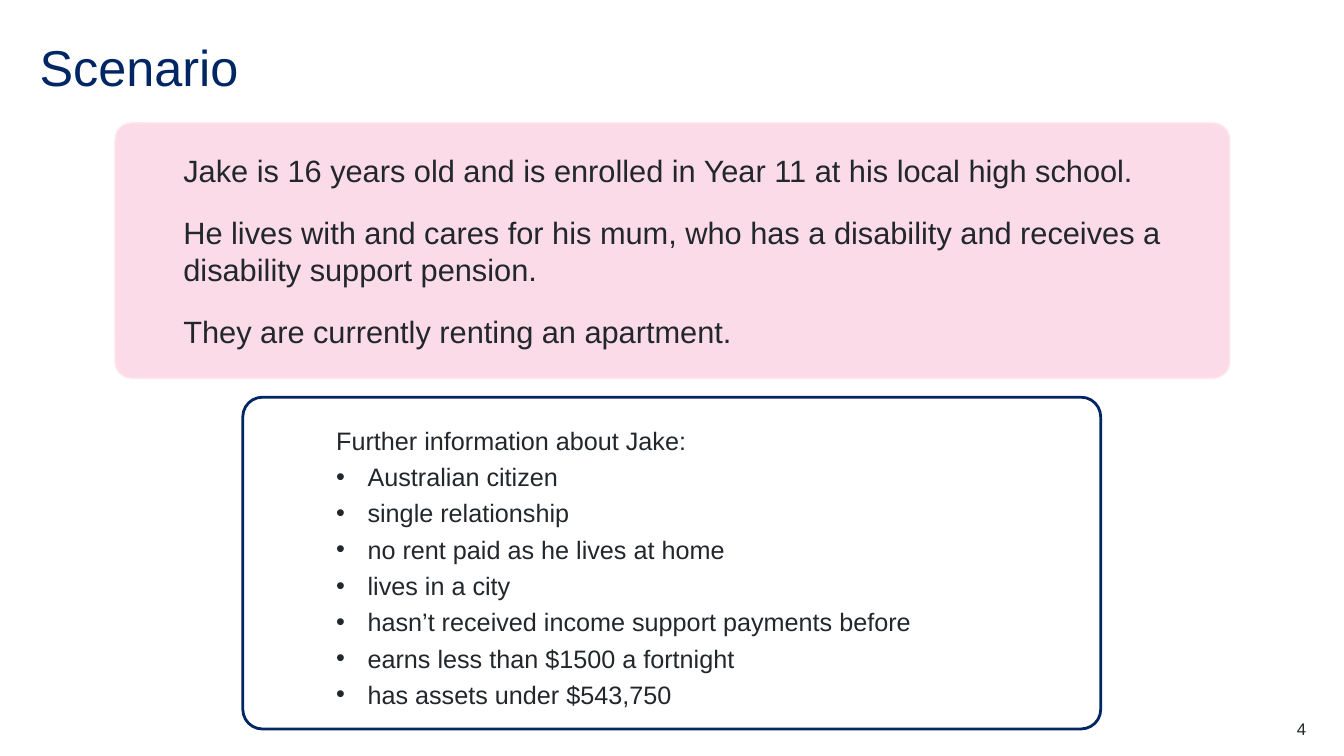
from pptx import Presentation
from pptx.dml.color import RGBColor
from pptx.enum.shapes import MSO_SHAPE as Shape
from pptx.enum.text import MSO_ANCHOR as Anchor, PP_ALIGN as Align
from pptx.oxml.ns import qn
from pptx.util import Cm, Pt
from lxml.etree import SubElement

NAVY = RGBColor(0x00, 0x26, 0x64)
INK = RGBColor(0x22, 0x27, 0x2B)
PINK = RGBColor(0xFB, 0xDB, 0xE7)
PINK_EDGE = RGBColor(0xFF, 0xE6, 0xEA)

STORY = [
    "Jake is 16 years old and is enrolled in Year 11 at his local high school.",
    "He lives with and cares for his mum, who has a disability and receives a "
    "disability support pension.",
    "They are currently renting an apartment.",
]
FACTS_HEADING = "Further information about Jake:"
FACTS = [
    "Australian citizen",
    "single relationship",
    "no rent paid as he lives at home",
    "lives in a city",
    "hasn’t received income support payments before",
    "earns less than $1500 a fortnight",
    "has assets under $543,750",
]


class SlideBuilder:
    font = "Arial"

    def __init__(self, page):
        self.page = page

    def fill_text(self, box, lines, size, color=INK, anchor=Anchor.TOP,
                  align=Align.LEFT, insets=(0, 0, 0, 0)):
        """Fill a box with one paragraph per line; insets are left, top, right, bottom in cm."""
        frame = box.text_frame
        frame.word_wrap = True
        frame.vertical_anchor = anchor
        (frame.margin_left, frame.margin_top,
         frame.margin_right, frame.margin_bottom) = map(Cm, insets)
        frame.text = "\n".join(lines)
        for para in frame.paragraphs:
            para.alignment = align
            for span in para.runs:
                span.font.name = self.font
                span.font.size = Pt(size)
                span.font.color.rgb = color
        return frame.paragraphs

    def label(self, place, text, size, **style):
        box = self.page.shapes.add_textbox(*map(Cm, place))
        return self.fill_text(box, [text], size, **style)[0]

    def panel(self, place, rounding, edge, edge_width, fill=None):
        box = self.page.shapes.add_shape(Shape.ROUNDED_RECTANGLE, *map(Cm, place))
        box.adjustments[0] = rounding
        box.shadow.inherit = False
        if fill is None:
            box.fill.background()
        else:
            box.fill.solid()
            box.fill.fore_color.rgb = fill
        box.line.color.rgb = edge
        box.line.width = Pt(edge_width)
        return box

    def indent(self, para, left, hanging=0, bullet=None):
        properties = para._p.get_or_add_pPr()
        properties.set("marL", str(Cm(left)))
        properties.set("indent", str(Cm(-hanging)))
        if bullet:
            SubElement(properties, qn("a:buFont")).set("typeface", self.font)
            SubElement(properties, qn("a:buChar")).set("char", bullet)


def main():
    deck = Presentation()
    deck.slide_width, deck.slide_height = Cm(33.87), Cm(19.05)
    builder = SlideBuilder(deck.slides.add_slide(deck.slide_layouts[6]))

    title = builder.label((1, 1, 31.9, 1.52), "Scenario", 36,
                          color=NAVY, anchor=Anchor.MIDDLE)
    title.line_spacing = 0.9

    story = builder.panel((2.9, 3.1, 28.09, 6.43), 0.065, PINK_EDGE, 1, PINK)
    for para in builder.fill_text(story, STORY, 22, anchor=Anchor.MIDDLE,
                                  insets=(1.6, 0.13, 0.25, 0.13)):
        para.space_before, para.space_after = Pt(6), Pt(12)

    facts = builder.panel((6.12, 10.01, 21.62, 8.36), 0.059, NAVY, 2)
    heading, *items = builder.fill_text(facts, [FACTS_HEADING, *FACTS], 18,
                                        insets=(0.51, 0.41, 0.51, 0.51))
    for para in (heading, *items):
        para.line_spacing = 1.2
    builder.indent(heading, 1.7)
    for item in items:
        builder.indent(item, 2.49, hanging=0.79, bullet="•")

    builder.label((30.91, 18.11, 2.01, 0.51), "4", 12, align=Align.RIGHT)
    deck.save("out.pptx")


if __name__ == "__main__":
    main()
